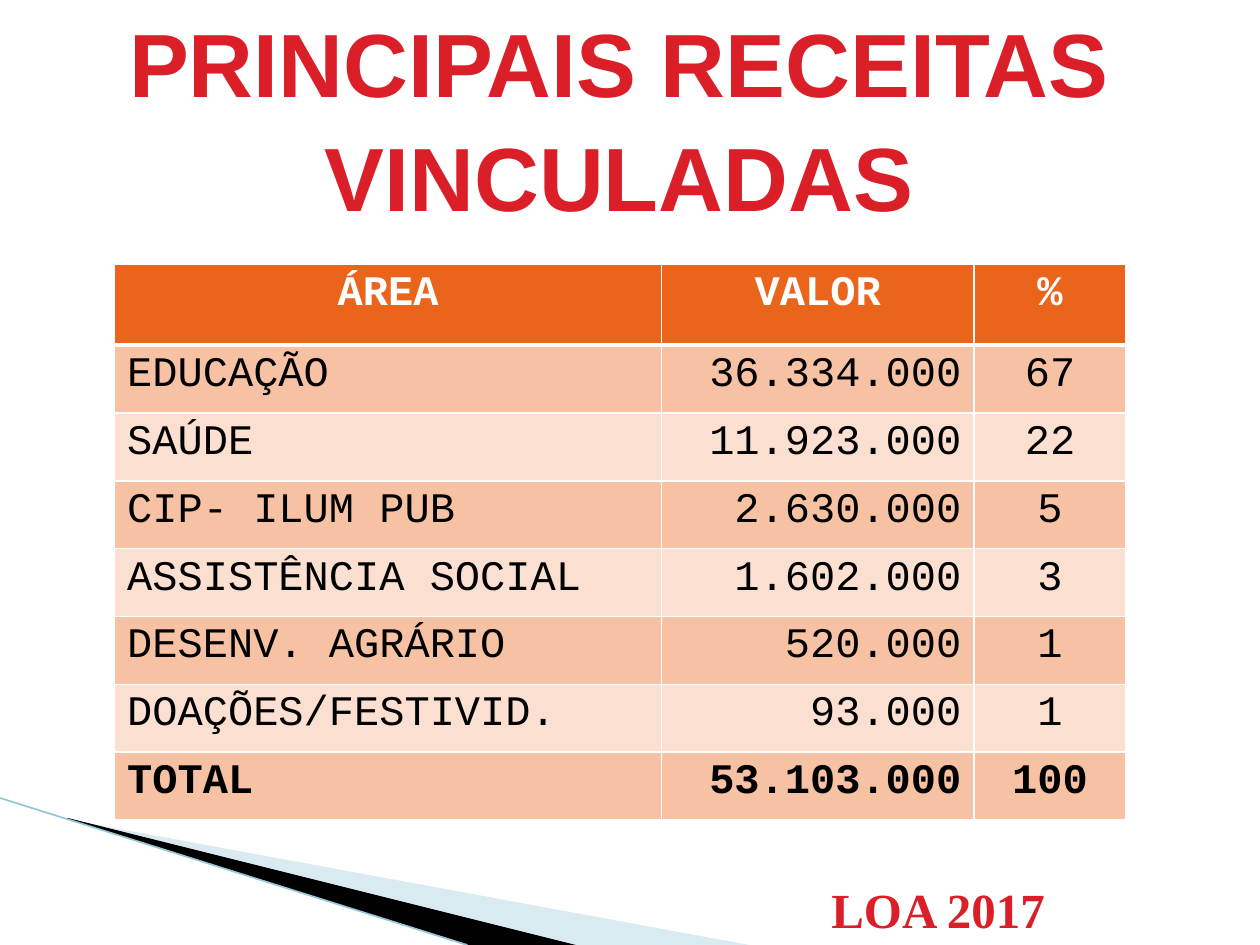
import pptx
import pptx.dml.color
import pptx.enum.shapes
import pptx.enum.text
import pptx.oxml
import pptx.oxml.ns
import pptx.util
import lxml.etree

Pt = pptx.util.Pt
ALIGN = pptx.enum.text.PP_ALIGN
ANCHOR = pptx.enum.text.MSO_ANCHOR
FIT = pptx.enum.text.MSO_AUTO_SIZE

RED, WHITE, BLACK = "DA1F28", "FFFFFF", "000000"
HEAD, BANDS = "EB641B", ("F7C1A4", "FBE0D1")
TITLE = {"name": "Arial", "size": Pt(51.3), "bold": True}
LABEL = {"name": "Times New Roman", "size": Pt(28), "bold": True}
CELL = {"name": "Courier New", "size": Pt(24)}

ROWS = [
    ("ÁREA", "VALOR", "%"),
    ("EDUCAÇÃO", "36.334.000", "67"),
    ("SAÚDE", "11.923.000", "22"),
    ("CIP- ILUM PUB", "2.630.000", "5"),
    ("ASSISTÊNCIA SOCIAL", "1.602.000", "3"),
    ("DESENV. AGRÁRIO", "520.000", "1"),
    ("DOAÇÕES/FESTIVID.", "93.000", "1"),
    ("TOTAL", "53.103.000", "100"),
]


def color(text):
    return pptx.dml.color.RGBColor.from_string(text)


def apply(item, values):
    for key, value in values.items():
        setattr(item, key, value)


class Deck:
    def __init__(self, width, height):
        self.show = pptx.Presentation()
        apply(self.show, {"slide_width": Pt(width), "slide_height": Pt(height)})
        self.slide = self.show.slides.add_slide(self.show.slide_layouts[5])

    def letter(self, frame, text, style, ink, align):
        para = frame.paragraphs[0]
        para.alignment = align
        run = para.add_run()
        run.text = text
        apply(run.font, style)
        run.font.color.rgb = color(ink)
        return para

    def title(self, text, box):
        shape = self.slide.shapes.title
        apply(shape, dict(zip(("left", "top", "width", "height"), map(Pt, box))))
        frame = shape.text_frame
        apply(frame, {"word_wrap": True, "auto_size": FIT.NONE,
                      "vertical_anchor": ANCHOR.MIDDLE})
        para = self.letter(frame, text, TITLE, RED, ALIGN.CENTER)
        para.line_spacing = 1.05

    def label(self, text, box):
        frame = self.slide.shapes.add_textbox(*map(Pt, box)).text_frame
        apply(frame, {"word_wrap": True, "auto_size": FIT.SHAPE_TO_FIT_TEXT})
        self.letter(frame, text, LABEL, RED, ALIGN.LEFT)

    def wedge(self, points, fill, alpha=None):
        first, *rest = [(Pt(x), Pt(y)) for x, y in points]
        form = self.slide.shapes.build_freeform(*first)
        form.add_line_segments(rest, close=True)
        shape = form.convert_to_shape()
        shape.shadow.inherit = False
        shape.fill.solid()
        shape.fill.fore_color.rgb = color(fill)
        shape.line.fill.background()
        if alpha:
            tone = shape._element.spPr.find(".//" + pptx.oxml.ns.qn("a:srgbClr"))
            node = lxml.etree.SubElement(tone, pptx.oxml.ns.qn("a:alpha"))
            node.set("val", str(alpha * 1000))

    def line(self, start, end, ink, width):
        kind = pptx.enum.shapes.MSO_CONNECTOR.STRAIGHT
        line = self.slide.shapes.add_connector(kind, *map(Pt, start + end))
        line.line.color.rgb = color(ink)
        line.line.width = Pt(width)
        lxml.etree.SubElement(line._element.spPr, pptx.oxml.ns.qn("a:effectLst"))

    def border(self, cell, row):
        widths = {"L": 1, "R": 1, "T": 3 if row == 1 else 1, "B": 3 if row == 0 else 1}
        props = cell._tc.get_or_add_tcPr()
        for side, width in widths.items():
            props.append(pptx.oxml.parse_xml(
                f'<a:ln{side} {pptx.oxml.ns.nsdecls("a")} w="{Pt(width)}">'
                f'<a:solidFill><a:srgbClr val="{WHITE}"/></a:solidFill></a:ln{side}>'))

    def table(self, rows, box, widths, heights):
        shape = self.slide.shapes.add_table(len(rows), len(widths), *map(Pt, box))
        grid = shape.table
        for col, width in zip(grid.columns, widths):
            col.width = Pt(width)
        for line, height in zip(grid.rows, heights):
            line.height = Pt(height)
        sides = (ALIGN.LEFT, ALIGN.RIGHT, ALIGN.CENTER)
        for r, row in enumerate(rows):
            top = r == 0
            style = {**CELL, "bold": r in (0, len(rows) - 1)}
            for c, text in enumerate(row):
                cell = grid.cell(r, c)
                self.border(cell, r)
                cell.fill.solid()
                cell.fill.fore_color.rgb = color(HEAD if top else BANDS[(r - 1) % 2])
                self.letter(cell.text_frame, text, style, WHITE if top else BLACK,
                            ALIGN.CENTER if top else sides[c])


def main():
    deck = Deck(720, 540)
    deck.wedge([(39.6, 468.5), (428, 540), (328, 540), (39.6, 468)], "A0CBDC", 40)
    deck.wedge([(38.2, 467.3), (329, 540), (267.8, 540), (38.9, 468)], BLACK)
    deck.line((0, 456), (267, 540), "97C5D8", 0.95)
    deck.title("PRINCIPAIS RECEITAS VINCULADAS", (36, 21.6, 635.8, 89.3))
    deck.label("LOA 2017", (468, 499, 158.4, 41))
    heights = [46] + [38.8] * (len(ROWS) - 1)
    widths = (312.5, 178.5, 87)
    deck.table(ROWS, (65.5, 151.2, sum(widths), sum(heights)), widths, heights)
    deck.show.save("out.pptx")


if __name__ == "__main__":
    main()
